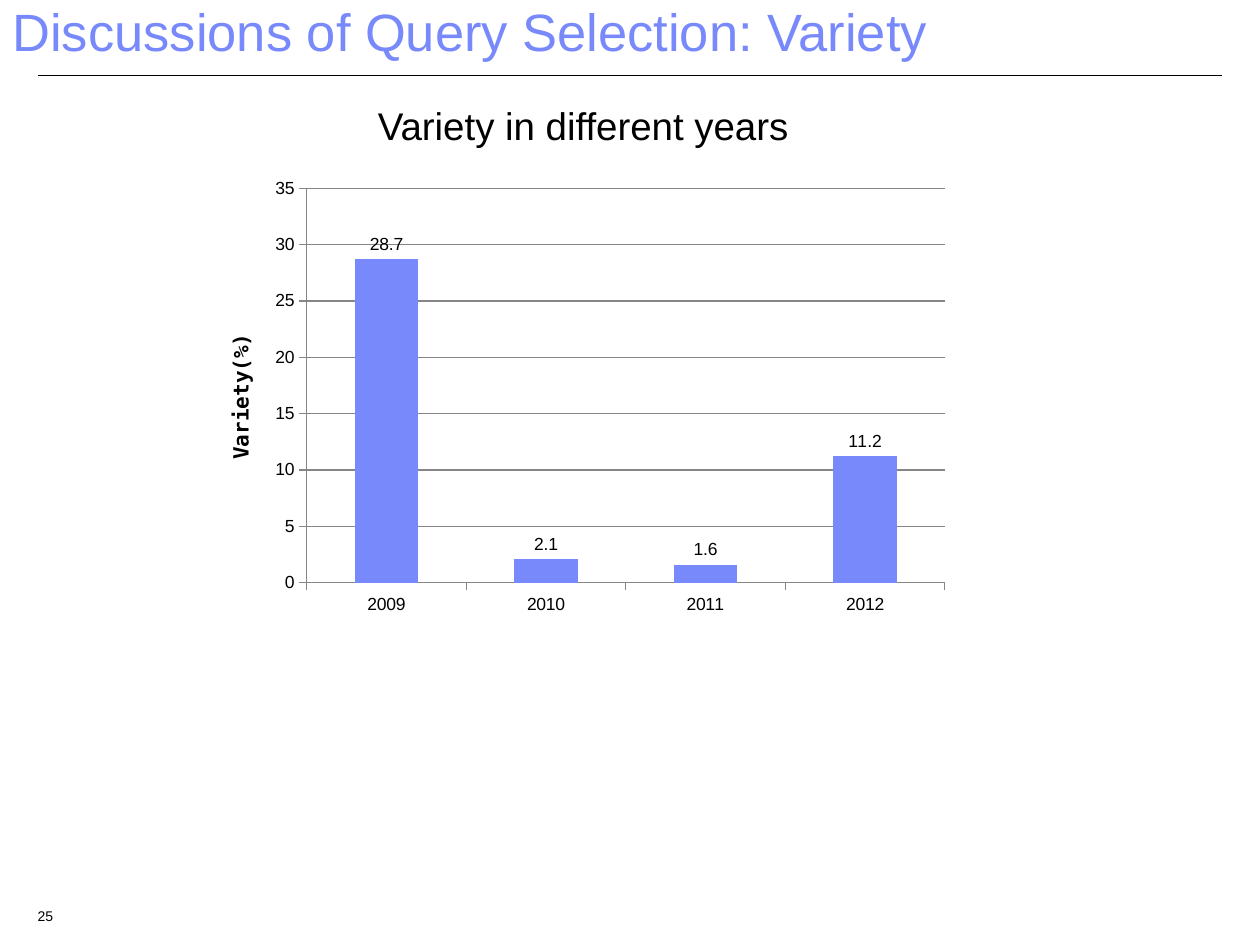
from pptx import Presentation
from pptx.chart.data import CategoryChartData as Data
from pptx.dml.color import RGBColor as Rgb
from pptx.enum.chart import XL_CHART_TYPE as Kind, XL_LABEL_POSITION as Spot, XL_TICK_MARK as Tick
from pptx.enum.text import MSO_ANCHOR as Anchor
from pptx.oxml import parse_xml as to_xml
from pptx.oxml.ns import nsdecls as names, qn
from pptx.util import Inches, Pt
from lxml.etree import SubElement as Sub

WIDE, HIGH = 10, 7.5
HUES = {"ink": "000000", "blue": "7889FB", "grey": "868686"}
SANS, MONO = "Arial", "DejaVu Sans Mono"


def hue(name):
    return Rgb.from_string(HUES[name])


def style(font, size, name=SANS, tint="ink", bold=False):
    font.size, font.name, font.bold = Pt(size), name, bold
    font.color.rgb = hue(tint)


def label(slide, box, text, size, tint="ink", wrap=True, lead=None):
    frame = slide.shapes.add_textbox(*map(Inches, box)).text_frame
    frame.word_wrap = wrap
    frame.vertical_anchor = Anchor.TOP
    para = frame.paragraphs[0]
    if lead:
        para.line_spacing = lead
    run = para.add_run()
    run.text = text
    style(run.font, size, tint=tint)


def header(slide, box, text):
    left, top, wide, high = box
    edge, base = 0.03 * wide, top + 0.6 * high
    ends = (left + edge, base, left + wide - edge, base)
    rule = slide.shapes.add_connector(1, *map(Inches, ends))
    rule.line.color.rgb = hue("ink")
    rule.line.width = Pt(0.75)
    Sub(rule._element.spPr, qn("a:effectLst"))
    label(slide, box, text, 30, "blue", lead=0.9)


def pin(chart, left, top, wide, high):
    plot = chart._chartSpace.chart.plotArea
    for old in plot.findall(qn("c:layout")):
        plot.remove(old)
    parts = "".join(f'<c:{key} val="{val}"/>' for key, val in (
        ("layoutTarget", "inner"), ("xMode", "edge"), ("yMode", "edge"),
        ("x", left), ("y", top), ("w", wide), ("h", high)))
    plot.insert(0, to_xml(
        f'<c:layout {names("c")}><c:manualLayout>{parts}</c:manualLayout></c:layout>'))


def graph(slide, box):
    data = Data()
    data.categories = ["2009", "2010", "2011", "2012"]
    data.add_series("Series 1", (28.7, 2.1, 1.6, 11.2))
    chart = slide.shapes.add_chart(
        Kind.COLUMN_CLUSTERED, *map(Inches, box), data).chart
    chart.has_legend = chart.has_title = False
    style(chart.font, 10)
    pin(chart, 0.14, 0.04, 0.84, 0.87)

    years, scale = chart.category_axis, chart.value_axis
    scale.minimum_scale, scale.maximum_scale, scale.major_unit = 0, 35, 5
    scale.has_major_gridlines = True
    for axis in (years, scale):
        axis.major_tick_mark = Tick.OUTSIDE
        axis.minor_tick_mark = Tick.NONE
    for part in (years, scale, scale.major_gridlines):
        part.format.line.color.rgb = hue("grey")
        part.format.line.width = Pt(0.75)
    run = scale.axis_title.text_frame.paragraphs[0].add_run()
    run.text = "Variety(%)"
    style(run.font, 12, MONO, bold=True)

    plot = chart.plots[0]
    plot.gap_width, plot.vary_by_categories = 150, False
    fill = plot.series[0].format.fill
    fill.solid()
    fill.fore_color.rgb = hue("blue")
    plot.has_data_labels = True
    tags = plot.data_labels
    tags.show_value, tags.position = True, Spot.OUTSIDE_END
    style(tags.font, 10)


def main():
    deck = Presentation()
    deck.slide_width, deck.slide_height = Inches(WIDE), Inches(HIGH)
    slide = deck.slides.add_slide(deck.slide_layouts[6])
    header(slide, (0, 0, WIDE, 1), "Discussions of Query Selection: Variety")
    graph(slide, (1.59, 1.35, 6.03, 3.6))
    label(slide, (2.9, 0.76, 3.51, 0.47), "Variety in different years", 22, wrap=False)
    label(slide, (0.2, 7.15, 0.4, 0.2), "25", 8)
    deck.save("out.pptx")


if __name__ == "__main__":
    main()
